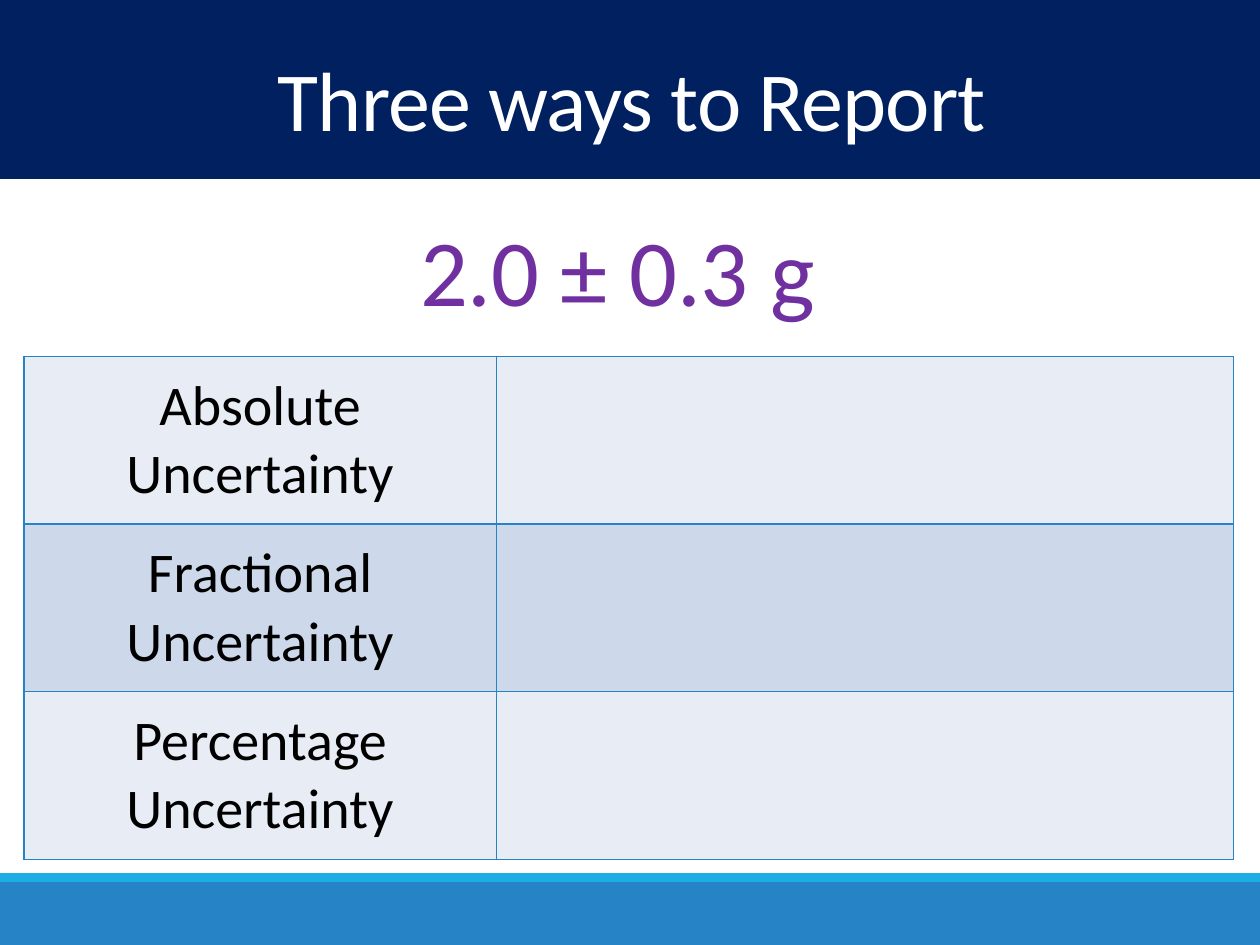
from dataclasses import dataclass
from itertools import product

from pptx import Presentation
from pptx.dml.color import RGBColor
from pptx.enum.shapes import MSO_SHAPE
from pptx.enum.text import MSO_ANCHOR, MSO_AUTO_SIZE, PP_ALIGN
from pptx.oxml import parse_xml
from pptx.oxml.ns import nsdecls
from pptx.slide import Slide
from pptx.table import _Cell
from pptx.text.text import TextFrame
from pptx.util import Inches, Pt

COLORS = {
    "navy": "002060",
    "blue": "2683C6",
    "cyan": "1CADE4",
    "purple": "7030A0",
    "white": "FFFFFF",
    "black": "000000",
    "light_row": "E8EDF5",
    "dark_row": "CDD9EA",
}
FONT = "Calibri"
ROW_LABELS = ["Absolute Uncertainty", "Fractional Uncertainty", "Percentage Uncertainty"]
COLUMN_WIDTHS = [3.75, 5.85]
ROW_HEIGHT = 1.33


@dataclass
class Bar:
    top: float
    height: float
    color: str


BARS = [Bar(7, 0.5, "blue"), Bar(6.93, 0.07, "cyan"), Bar(0, 1.42, "navy")]


def rgb(color: str) -> RGBColor:
    return RGBColor.from_string(COLORS[color])


def draw_bar(slide: Slide, bar: Bar) -> None:
    shape = slide.shapes.add_shape(
        MSO_SHAPE.RECTANGLE, 0, Inches(bar.top), Inches(10), Inches(bar.height))
    shape.shadow.inherit = False
    shape.fill.solid()
    shape.fill.fore_color.rgb = rgb(bar.color)
    shape.line.fill.background()


def write_centered(frame: TextFrame, text: str, size: int, color: str) -> None:
    paragraph = frame.paragraphs[0]
    paragraph.alignment = PP_ALIGN.CENTER
    run = paragraph.add_run()
    run.text = text
    for name, value in {"name": FONT, "size": Pt(size)}.items():
        setattr(run.font, name, value)
    run.font.color.rgb = rgb(color)


def format_cell(cell: _Cell, fill: str) -> None:
    # Borders come before the fill in the cell properties
    properties = cell._tc.get_or_add_tcPr()
    for side in ("L", "R", "T", "B"):
        properties.append(parse_xml(
            f'<a:ln{side} {nsdecls("a")} w="{Pt(1)}"><a:solidFill>'
            f'<a:srgbClr val="{COLORS["blue"]}"/></a:solidFill></a:ln{side}>'))
    cell.fill.solid()
    cell.fill.fore_color.rgb = rgb(fill)
    cell.vertical_anchor = MSO_ANCHOR.MIDDLE


def add_title(slide: Slide) -> None:
    title = slide.shapes.title
    place = {"left": 0.03, "top": 0.42, "width": 9.97, "height": 0.84}
    for name, value in place.items():
        setattr(title, name, Inches(value))
    frame = title.text_frame
    frame.auto_size = MSO_AUTO_SIZE.NONE
    frame.vertical_anchor = MSO_ANCHOR.MIDDLE
    write_centered(frame, "Three ways to Report", 48, "white")
    paragraph = frame.paragraphs[0]
    paragraph.line_spacing = 0.85
    paragraph.runs[0].font._element.set("spc", "-50")
    # Bring the title in front of the banner
    slide.shapes._spTree.append(title._element)


def add_uncertainty_table(slide: Slide) -> None:
    table = slide.shapes.add_table(
        len(ROW_LABELS), len(COLUMN_WIDTHS), Inches(0.19), Inches(2.83),
        Inches(sum(COLUMN_WIDTHS)), Inches(ROW_HEIGHT * len(ROW_LABELS))).table
    table.first_row = False
    for column, width in zip(table.columns, COLUMN_WIDTHS):
        column.width = Inches(width)
    for row, column in product(range(len(ROW_LABELS)), range(len(COLUMN_WIDTHS))):
        format_cell(table.cell(row, column), "dark_row" if row % 2 else "light_row")
    for row, label in enumerate(ROW_LABELS):
        write_centered(table.cell(row, 0).text_frame, label, 32, "black")


def add_measurement(slide: Slide) -> None:
    box = slide.shapes.add_textbox(Inches(0.19), Inches(1.63), Inches(9.59), Inches(1.01))
    box.text_frame.word_wrap = True
    box.text_frame.auto_size = MSO_AUTO_SIZE.SHAPE_TO_FIT_TEXT
    write_centered(box.text_frame, "2.0 ± 0.3 g ", 54, "purple")


def main() -> None:
    presentation = Presentation()
    presentation.slide_width = Inches(10)
    presentation.slide_height = Inches(7.5)
    slide = presentation.slides.add_slide(presentation.slide_layouts[5])

    for bar in BARS:
        draw_bar(slide, bar)
    add_title(slide)
    add_uncertainty_table(slide)
    add_measurement(slide)
    presentation.save("out.pptx")


if __name__ == "__main__":
    main()
